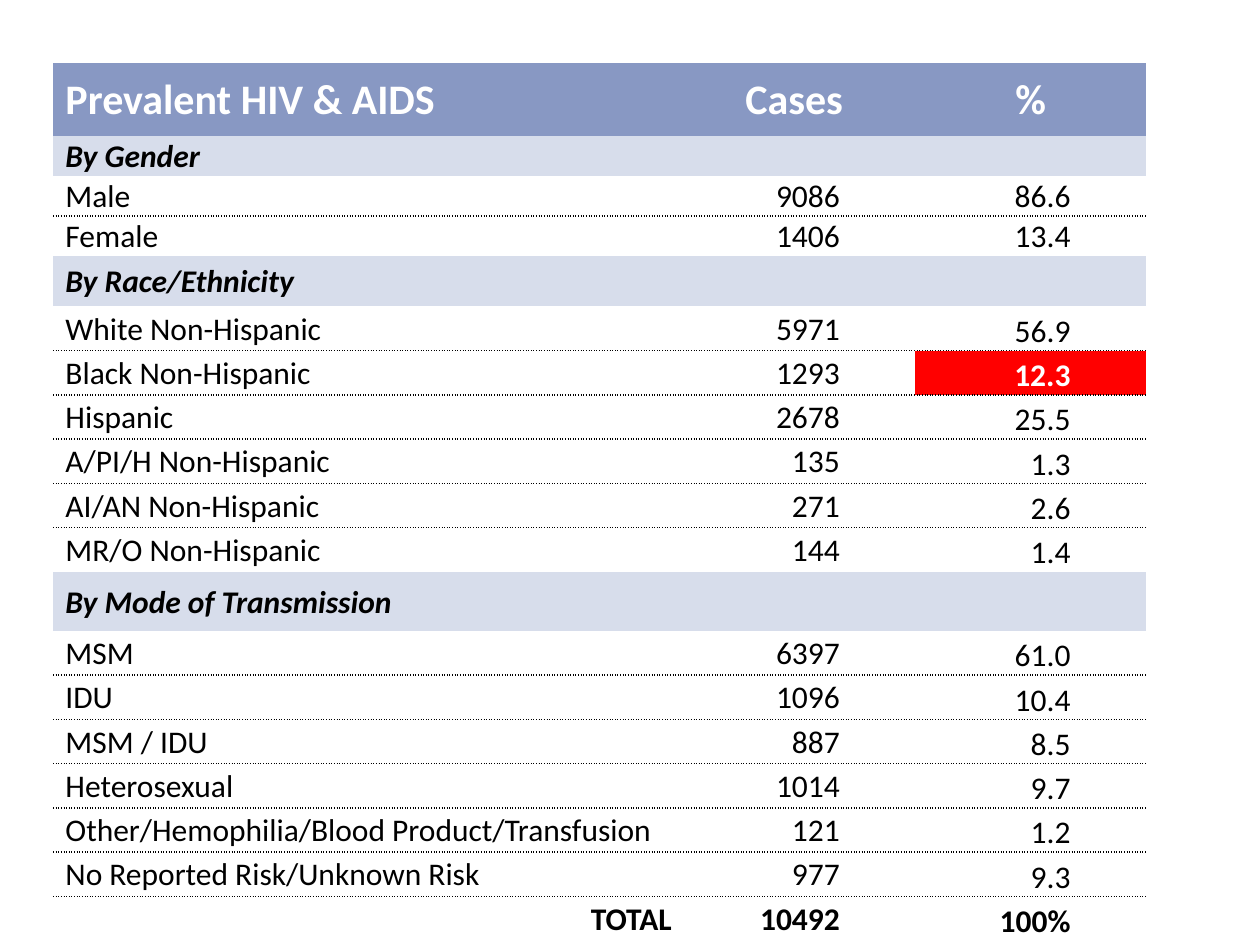
"""Build a slide with a table of prevalent HIV and AIDS cases by group."""
from lxml import etree
from pptx import Presentation, util as u
from pptx.dml import color
from pptx.enum import text
from pptx.oxml import ns

HEADING = ("Prevalent HIV & AIDS", "Cases", "%")
SECTIONS = [
    ("By Gender", 0.79, [
        ("Male", "9086", "86.6"),
        ("Female", "1406", "13.4"),
    ]),
    ("By Race/Ethnicity", 1.02, [
        ("White Non-Hispanic", "5971", "56.9"),
        ("Black Non-Hispanic", "1293", "12.3"),
        ("Hispanic", "2678", "25.5"),
        ("A/PI/H Non-Hispanic", "135", "1.3"),
        ("AI/AN Non-Hispanic", "271", "2.6"),
        ("MR/O Non-Hispanic", "144", "1.4"),
    ]),
    ("By Mode of Transmission", 1.19, [
        ("MSM", "6397", "61.0"),
        ("IDU", "1096", "10.4"),
        ("MSM / IDU", "887", "8.5"),
        ("Heterosexual", "1014", "9.7"),
        ("Other/Hemophilia/Blood Product/Transfusion", "121", "1.2"),
        ("No Reported Risk/Unknown Risk", "977", "9.3"),
        ("TOTAL", "10492", "100%"),
    ]),
]
HIGHLIGHT = "Black Non-Hispanic"
COLUMN_WIDTHS = (12.5, 4.88, 4.65)
HEADING_HEIGHT, ENTRY_HEIGHT, FEMALE_HEIGHT = 1.47, 0.79, 0.53
LEFT, TOP, TABLE_HEIGHT = 1.07, 1.27, 17.45

LABEL_INSET, THIN_INSET, FIGURE_INSET = u.Cm(0.25), u.Cm(0.03), u.Cm(1.52)
PLAIN = dict(margin_left=THIN_INSET, margin_right=THIN_INSET, margin_top=THIN_INSET,
             margin_bottom=0, vertical_anchor=text.MSO_ANCHOR.MIDDLE)
LABEL = PLAIN | dict(margin_left=LABEL_INSET)
FIGURE = PLAIN | dict(margin_right=FIGURE_INSET)
PERCENT = FIGURE | dict(margin_left=u.Cm(0.18), margin_top=0,
                        vertical_anchor=text.MSO_ANCHOR.BOTTOM)
HEADING_FONT = dict(name="Calibri", size=u.Pt(24), bold=True, italic=False)
ENTRY_FONT = HEADING_FONT | dict(size=u.Pt(18), bold=False)
SECTION_FONT = ENTRY_FONT | dict(bold=True, italic=True)
TOTAL_FONT = ENTRY_FONT | dict(bold=True)


def rgb(value):
    return color.RGBColor.from_string(value)


def apply(target, formats):
    for attribute, value in formats.items():
        setattr(target, attribute, value)


def set_borders(cell, dotted_sides):
    properties = cell._tc.get_or_add_tcPr()
    for position, side in enumerate("LRTB"):
        border = etree.Element(ns.qn(f"a:ln{side}"), w=str(u.Pt(1)))
        if side in dotted_sides:
            ink = etree.SubElement(border, ns.qn("a:solidFill"))
            etree.SubElement(ink, ns.qn("a:srgbClr"), val="000000")
            etree.SubElement(border, ns.qn("a:prstDash"), val="sysDot")
        else:
            etree.SubElement(border, ns.qn("a:noFill"))
        properties.insert(position, border)


def fill_cell(cell, wording, formats, font, fill, ink="000000", align="LEFT",
              spacing=None, dotted_sides=""):
    apply(cell, formats)
    cell.fill.solid()
    cell.fill.fore_color.rgb = rgb(fill)
    set_borders(cell, dotted_sides)
    paragraph = cell.text_frame.paragraphs[0]
    paragraph.alignment = getattr(text.PP_ALIGN, align)
    paragraph.line_spacing = spacing
    if wording:
        run = paragraph.add_run()
        run.text = wording
        apply(run.font, font)
        run.font.color.rgb = rgb(ink)


def fill_entry(cells, entry, dotted_sides, loose_percent):
    total = entry[0] == "TOTAL"
    font = TOTAL_FONT if total else ENTRY_FONT
    for column, (cell, wording) in enumerate(zip(cells, entry)):
        percent = column == 2 and loose_percent
        marked = column == 2 and entry[0] == HIGHLIGHT
        label = PLAIN if total else LABEL
        fill_cell(cell, wording,
                  PERCENT if percent else FIGURE if column else label,
                  TOTAL_FONT if marked else font,
                  "FF0000" if marked else "FFFFFF",
                  "FFFFFF" if marked else "000000",
                  "RIGHT" if column or total else "LEFT",
                  1.15 if percent else None, dotted_sides)


def main():
    deck = Presentation()
    deck.slide_width, deck.slide_height = u.Cm(25.4), u.Cm(19.05)
    slide = deck.slides.add_slide(deck.slide_layouts[6])
    row_count = 1 + sum(1 + len(entries) for _, _, entries in SECTIONS)
    frame = slide.shapes.add_table(row_count, len(HEADING), u.Cm(LEFT), u.Cm(TOP),
                                   u.Cm(sum(COLUMN_WIDTHS)), u.Cm(TABLE_HEIGHT))
    table = frame.table
    apply(table, dict(first_row=False, horz_banding=False))
    for column, width in zip(table.columns, COLUMN_WIDTHS):
        column.width = u.Cm(width)

    rows = iter(table.rows)
    heading_row = next(rows)
    heading_row.height = u.Cm(HEADING_HEIGHT)
    for column, (cell, wording) in enumerate(zip(heading_row.cells, HEADING)):
        fill_cell(cell, wording, PLAIN if column else LABEL, HEADING_FONT,
                  "8898C3", "FFFFFF", "CENTER" if column else "LEFT")

    for title, title_height, entries in SECTIONS:
        title_row = next(rows)
        title_row.height = u.Cm(title_height)
        for cell, wording in zip(title_row.cells, (title, "", "")):
            fill_cell(cell, wording, LABEL, SECTION_FONT, "D7DDEB")
        for number, entry in enumerate(entries):
            row = next(rows)
            row.height = u.Cm(FEMALE_HEIGHT if entry[0] == "Female" else ENTRY_HEIGHT)
            dotted_sides = ("T" if number else "") + ("B" if entry != entries[-1] else "")
            fill_entry(row.cells, entry, dotted_sides, title != "By Gender")

    frame.height = u.Cm(TABLE_HEIGHT)
    deck.save("out.pptx")


if __name__ == "__main__":
    main()
